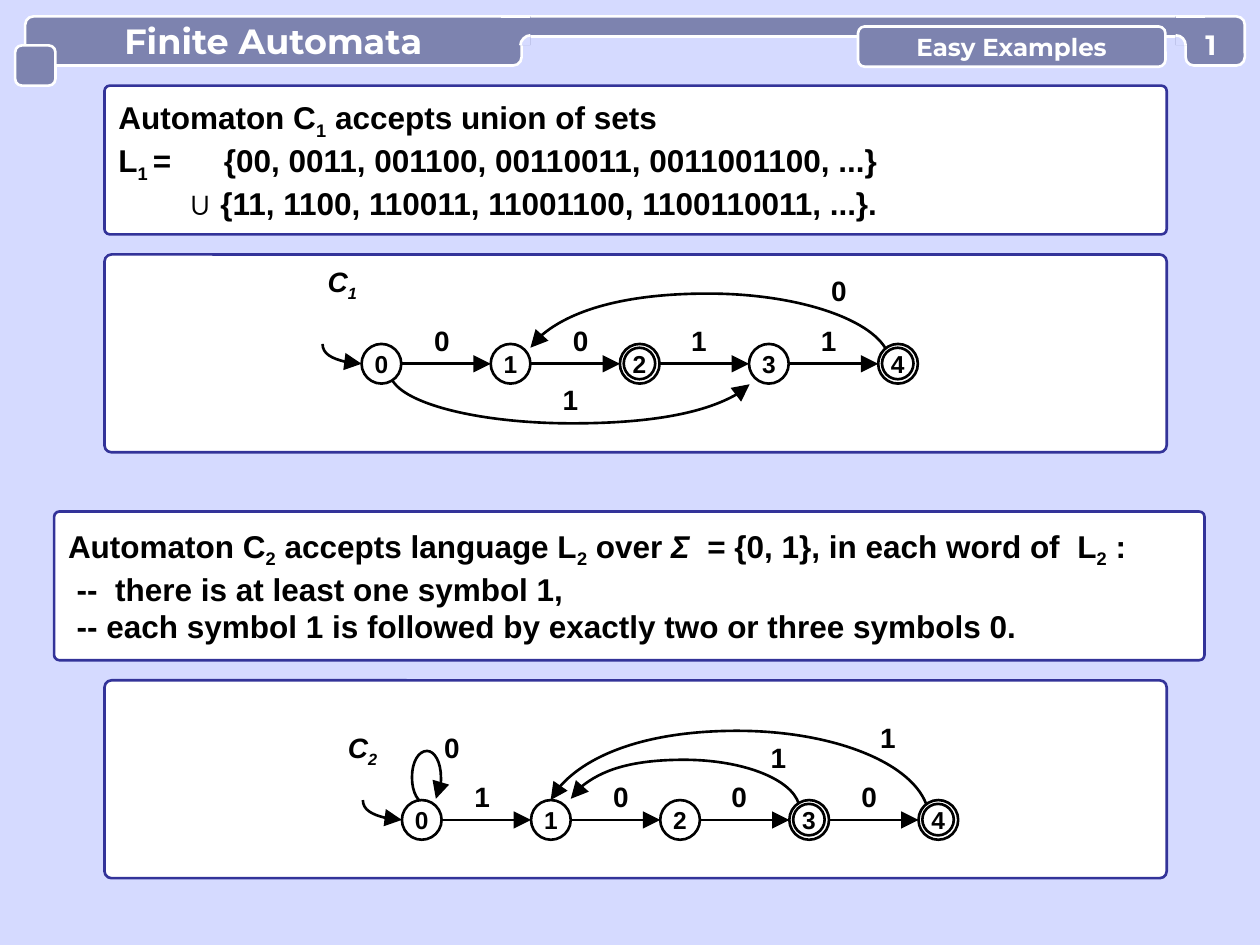
from copy import deepcopy
from dataclasses import dataclass
from typing import NamedTuple

from lxml.etree import SubElement
from pptx import Presentation
from pptx.dml.color import RGBColor
from pptx.enum.shapes import MSO_CONNECTOR, MSO_SHAPE
from pptx.enum.text import MSO_ANCHOR, PP_ALIGN
from pptx.oxml.ns import qn
from pptx.util import Inches, Pt

SKY, SLATE, NAVY, WHITE, BLACK = "D5DAFF", "7D83AF", "333399", "FFFFFF", "000000"
NODE, STEP = 0.315, 1.025
LETTER_OFFSETS = (0.48, 1.58, 2.52, 3.55)
Point = tuple[float, float]


class Span(NamedTuple):
    text: str
    sub: bool = False
    italic: bool = False
    spacing: float = 0


class Line(NamedTuple):
    spans: list[Span]
    indent: float = 0


class Label(NamedTuple):
    text: str
    left: float
    top: float


@dataclass
class Automaton:
    index: str
    name_at: Point
    left: float
    top: float
    accepting: set[int]
    letters: str
    arcs: list[list[Point]]
    labels: list[Label]


def paint(target, color: str) -> None:
    target.solid()
    target.fore_color.rgb = RGBColor.from_string(color)


def write(box, lines: list[Line], *, size: float, font: str = "Arial", color: str = BLACK,
          align=PP_ALIGN.CENTER, anchor=MSO_ANCHOR.MIDDLE, inset: float = 0, wrap: bool = True) -> None:
    frame = box.text_frame
    frame.word_wrap = wrap
    frame.vertical_anchor = anchor
    frame.margin_left = frame.margin_right = Inches(inset)
    frame.margin_top = frame.margin_bottom = Inches(inset / 2)
    for number, line in enumerate(lines):
        para = frame.add_paragraph() if number else frame.paragraphs[0]
        para.alignment = align
        if line.indent:
            properties = para._p.get_or_add_pPr()
            properties.set("marL", str(Inches(line.indent)))
            properties.set("indent", "0")
        for span in line.spans:
            run = para.add_run()
            run.text = span.text
            run.font.size, run.font.name = Pt(size), font
            run.font.bold, run.font.italic = True, span.italic
            run.font.color.rgb = RGBColor.from_string(color)
            if span.sub:
                run._r.get_or_add_rPr().set("baseline", "-25000")
            if span.spacing:
                run._r.get_or_add_rPr().set("spc", str(round(span.spacing * 100)))


def style(shape, fill: str | None, line: str | None) -> None:
    shape.shadow.inherit = False
    if fill:
        paint(shape.fill, fill)
    else:
        shape.fill.background()
    if line:
        paint(shape.line.fill, line)
        shape.line.width = Pt(1.5)
    else:
        shape.line.fill.background()


def add_box(page, kind, left: float, top: float, width: float, height: float,
            fill: str, line: str | None, corner: float | None = None):
    box = page.shapes.add_shape(kind, Inches(left), Inches(top), Inches(width), Inches(height))
    if corner is not None:
        box.adjustments[0] = corner
    style(box, fill, line)
    return box


def add_label(page, spans: list[Span], left: float, top: float, width: float = NODE,
              height: float = NODE, **form) -> None:
    box = page.shapes.add_textbox(Inches(left), Inches(top), Inches(width), Inches(height))
    write(box, [Line(spans)], **form)


def add_arrowhead(shape, end: str) -> None:
    SubElement(shape.line._get_or_add_ln(), qn(f"a:{end}"), type="triangle", w="lg", len="lg")


def add_line(page, start: Point, finish: Point, color: str):
    line = page.shapes.add_connector(MSO_CONNECTOR.STRAIGHT, *map(Inches, start + finish))
    paint(line.line.fill, color)
    line.line.width = Pt(1.5)
    SubElement(line._element.spPr, qn("a:effectLst"))
    return line


def add_curve(page, bend: list[Point], color: str, fill: str | None = None, corner: Point | None = None):
    points = bend + [corner] if corner else bend
    places = [(Inches(x), Inches(y)) for x, y in points]
    builder = page.shapes.build_freeform(*places[0])
    builder.add_line_segments(places[1:], close=False)
    curve = builder.convert_to_shape()
    style(curve, fill, color)
    outline = next(curve._element.iter(qn("a:path")))
    sides = outline.findall(qn("a:lnTo"))
    for first in range(0, len(bend) - 1, 3):
        cubic = outline.makeelement(qn("a:cubicBezTo"))
        sides[first].addprevious(cubic)
        for side in sides[first:first + 3]:
            cubic.append(side[0])
            outline.remove(side)
    if corner:
        edge = deepcopy(outline)
        edge.remove(edge.find(qn("a:lnTo")))
        edge.set("fill", "none")
        outline.set("stroke", "0")
        SubElement(outline, qn("a:close"))
        outline.addnext(edge)
    return curve


def add_joint(page, left: float, bend: list[Point], corner: Point) -> None:
    add_box(page, MSO_SHAPE.RECTANGLE, left, 0.13, 0.23, 0.23, SLATE, None)
    add_line(page, (left, 0.13), (left + 0.23, 0.13), WHITE)
    add_curve(page, bend, WHITE, SKY, corner)


def add_node(page, left: float, top: float, name: str, accepting: bool) -> None:
    node = add_box(page, MSO_SHAPE.OVAL, left, top, NODE, NODE, WHITE, BLACK)
    if accepting:
        node = add_box(page, MSO_SHAPE.OVAL, left + 0.03, top + 0.03, 0.25, 0.25, WHITE, BLACK)
    write(node, [Line([Span(name)])], size=14, wrap=False)


def add_automaton(page, item: Automaton) -> None:
    left, top, middle = item.left, item.top, item.top + NODE / 2
    entry = [(left, middle), (left - 0.17, middle), (left - 0.31, top + 0.08), (left - 0.31, top)]
    for arc in [entry, *item.arcs]:
        add_arrowhead(add_curve(page, arc, BLACK), "headEnd")
    for state in range(5):
        add_node(page, left + state * STEP, top, str(state), state in item.accepting)
    for state in range(4):
        start = left + state * STEP + NODE
        arrow = add_line(page, (start, middle), (start + STEP - NODE, middle), BLACK)
        add_arrowhead(arrow, "tailEnd")
    steps = [Label(letter, left + offset, top - 0.16) for letter, offset in zip(item.letters, LETTER_OFFSETS)]
    for label in steps + item.labels:
        add_label(page, [Span(label.text)], label.left, label.top, size=16, anchor=MSO_ANCHOR.TOP)
    name = [Span("C", italic=True), Span(item.index, sub=True, italic=True)]
    add_label(page, name, *item.name_at, size=16, anchor=MSO_ANCHOR.TOP)


def add_panel(page, left: float, top: float, width: float, height: float, lines: list[Line]) -> None:
    panel = add_box(page, MSO_SHAPE.ROUNDED_RECTANGLE, left, top, width, height, WHITE, NAVY, 0.035)
    if lines:
        write(panel, lines, size=18, align=PP_ALIGN.LEFT, inset=0.1)


def add_header(page) -> None:
    def bar(left, top, width, height, corner=0.17):
        return add_box(page, MSO_SHAPE.ROUNDED_RECTANGLE, left, top, width, height, SLATE, WHITE, corner)

    form = {"font": "Montserrat", "color": WHITE}
    write(bar(0.2, 0.13, 3.94, 0.39), [Line([Span("Finite Automata")])], size=20, wrap=False, **form)
    bar(4.06, 0.13, 5.43, 0.16, 0.5)
    add_joint(page, 3.98, [(4.21, 0.28), (4.17, 0.28), (4.13, 0.32), (4.13, 0.36)], (4.21, 0.36))
    bar(0.12, 0.36, 0.32, 0.32)
    bar(9.41, 0.13, 0.47, 0.39)
    add_joint(page, 9.33, [(9.33, 0.28), (9.38, 0.28), (9.41, 0.32), (9.41, 0.36)], (9.33, 0.36))
    write(bar(6.81, 0.21, 2.44, 0.32), [Line([Span("Easy Examples")])], size=14, wrap=False, **form)
    add_label(page, [Span("1")], 9.41, 0.22, 0.4, 0.27, size=16, **form)


WIDE, DOUBLE = Span(" ", spacing=25), Span(" ", spacing=5)
ONE, TWO = Span("1", sub=True), Span("2", sub=True)
UNION = [
    Line([Span("Automaton C"), ONE, Span(" accepts union of sets")]),
    Line([Span("L"), Span("1 ", sub=True), Span("="), WIDE,
          Span("{00, 0011, 001100, 00110011, 0011001100, ...}")]),
    Line([Span("∪ {11, 1100, 110011, 11001100, 1100110011, ...}.")], indent=0.56),
]
LANGUAGE = [
    Line([Span("Automaton C"), TWO, Span(" accepts language L"), TWO, Span(" over "), Span("Σ", italic=True),
          DOUBLE, Span("= {0, 1}, in each word of"), DOUBLE, Span("L"), TWO, Span(" :")]),
    Line([Span(" --"), DOUBLE, Span("there is at least one symbol 1,")]),
    Line([Span(" -- each symbol 1 is followed by exactly two or three symbols 0.")]),
]
AUTOMATA = [
    Automaton("1", (2.56, 2.1), 2.87, 2.73, {2, 4}, "0011", [
        [(4.21, 2.76), (4.37, 2.51), (4.95, 2.33), (5.62, 2.33), (6.34, 2.33), (6.95, 2.54), (7.05, 2.81)],
        [(5.95, 3.05), (5.79, 3.23), (5.21, 3.36), (4.54, 3.36), (3.82, 3.36), (3.21, 3.21), (3.11, 3.01)],
    ], [Label("0", 6.5, 2.17), Label("1", 4.37, 3.04)]),
    Automaton("2", (2.72, 5.8), 3.19, 6.35, {3, 4}, "1000", [
        [(3.46, 6.34), (3.49, 6.3), (3.5, 6.23), (3.5, 6.17), (3.5, 6.05), (3.45, 5.96), (3.39, 5.96),
         (3.32, 5.96), (3.27, 6.05), (3.27, 6.17), (3.27, 6.29), (3.32, 6.38), (3.39, 6.38)],
        [(4.37, 6.35), (4.53, 6.03), (5.15, 5.8), (5.85, 5.8), (6.62, 5.8), (7.26, 6.06), (7.36, 6.41)],
        [(4.53, 6.34), (4.63, 6.16), (5, 6.03), (5.43, 6.03), (5.89, 6.03), (6.28, 6.18), (6.34, 6.38)],
    ], [Label("0", 3.43, 5.8), Label("1", 6.02, 5.88), Label("1", 6.89, 5.72)]),
]


def main() -> None:
    deck = Presentation()
    deck.slide_width, deck.slide_height = Inches(10), Inches(7.5)
    page = deck.slides.add_slide(deck.slide_layouts[6])
    paint(page.background.fill, SKY)
    add_header(page)
    add_panel(page, 0.83, 0.68, 8.43, 1.18, UNION)
    add_panel(page, 0.83, 2.02, 8.43, 1.57, [])
    add_panel(page, 0.43, 4.06, 9.13, 1.18, LANGUAGE)
    add_panel(page, 0.83, 5.4, 8.43, 1.57, [])
    for automaton in AUTOMATA:
        add_automaton(page, automaton)
    deck.save("out.pptx")


if __name__ == "__main__":
    main()
